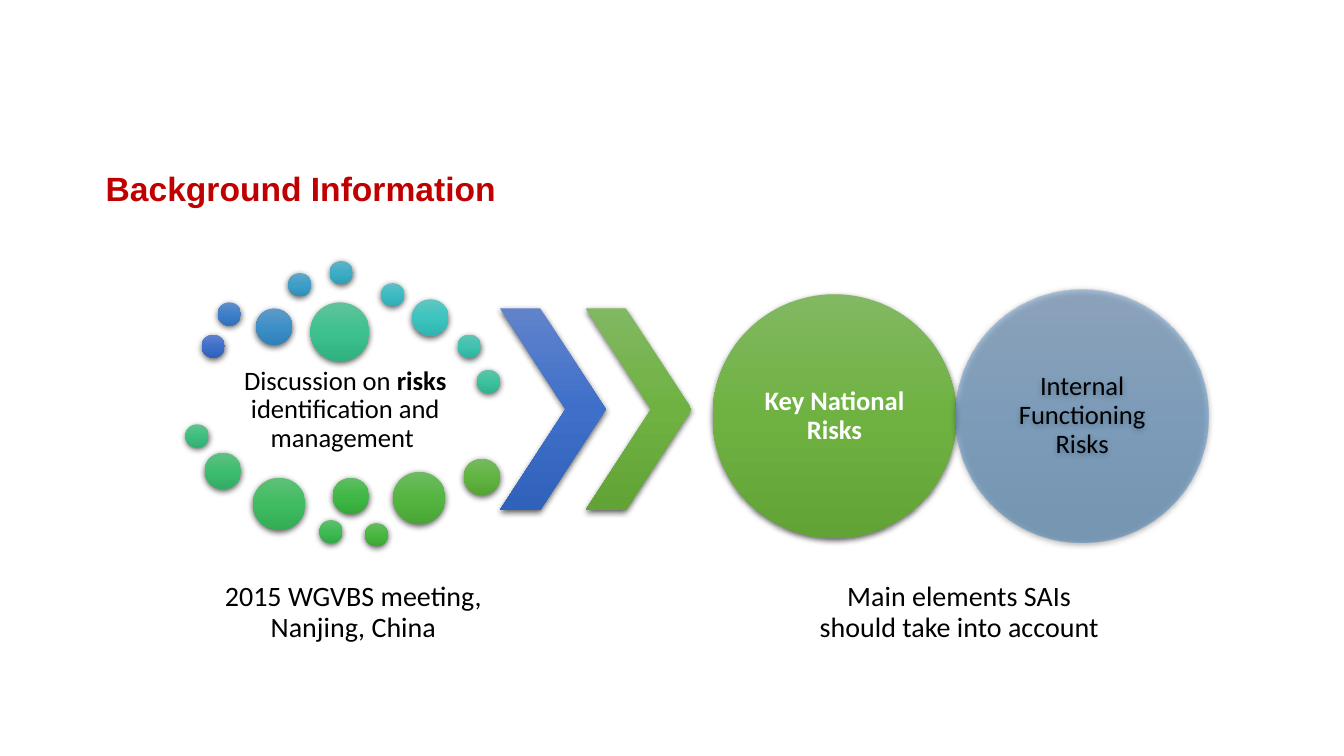
from copy import deepcopy

from lxml import etree
from pptx import Presentation
from pptx.dml.color import RGBColor
from pptx.enum.shapes import MSO_SHAPE
from pptx.enum.text import MSO_ANCHOR, PP_ALIGN
from pptx.oxml.ns import qn
from pptx.util import Pt

ELLIPSE, CHEVRON = MSO_SHAPE.OVAL, MSO_SHAPE.CHEVRON
MIDDLE = MSO_ANCHOR.MIDDLE
LEFT, CENTER = PP_ALIGN.LEFT, PP_ALIGN.CENTER

BLACK, WHITE, RED = "000000", "FFFFFF", "C00000"
# Gradients from top to bottom
BLUE = "6183CB 3E70CA 3062BB"
GREEN = "81B861 6FB242 62A336"
PALE_BLUE = "6B99C9 4D8DC7 3E7EB7"

SMALL, MEDIUM, LARGE, LARGEST = 16.6, 26, 37.4, 42
# Left, top, diameter, gradient
DOTS = [
    (144, 239, SMALL, BLUE),
    (155.5, 216, SMALL, "618ECA 3D80C9 3071BA"),
    (182.9, 220.3, MEDIUM, "619AC9 3D8FC8 3080B9"),
    (205.9, 195.1, SMALL, "61A6C8 3D9EC7 308FB8"),
    (235.4, 186.5, SMALL, "61B2C7 3DADC6 309EB7"),
    (272.2, 202.3, SMALL, "61BEC7 3DBBC5 30ACB6"),
    (294.5, 213.8, MEDIUM, "60C6C1 3DC4BF 30B5B0"),
    (326.9, 239, SMALL, "60C5B4 3DC3AF 30B39F"),
    (340.6, 264.2, SMALL, "60C4A6 3DC29F 31B28F"),
    (221.8, 216, LARGEST, "60C39A 3DC18F 31B080"),
    (132.5, 303.1, SMALL, "60C28E 3EBF7F 32AF71"),
    (146.2, 323.3, MEDIUM, "60C182 3EBD70 32AD63"),
    (180.7, 341.3, LARGE, "60C077 3FBC62 33AC55"),
    (228.2, 371.5, SMALL, "60BF6D 3FBA54 33AA47"),
    (237.6, 341.3, MEDIUM, "60BD64 40B846 34A93A"),
    (260.6, 373.7, SMALL, "65BC61 48B740 3CA735"),
    (280.8, 337, LARGE, "6EBB61 55B541 49A635"),
    (331.2, 327.6, MEDIUM, "77B961 62B441 55A436"),
]


def rgb(color):
    return RGBColor.from_string(color)


def set_alpha(color_element, percent):
    alpha = etree.SubElement(color_element, qn("a:alpha"))
    alpha.set("val", str(percent * 1000))


def fill_gradient(shape, gradient, opacity):
    """Fill with three evenly spaced stops, running from top to bottom."""
    fill = shape.fill
    fill.gradient()
    fill.gradient_angle = 270
    stop_list = shape.element.spPr.find(".//" + qn("a:gsLst"))
    stop_list.insert(1, deepcopy(stop_list[0]))
    stops = zip(fill.gradient_stops, (0, 0.5, 1), gradient.split())
    for stop, position, color in stops:
        stop.position = position
        stop.color.rgb = rgb(color)
    if opacity < 100:
        for color_element in stop_list.iter(qn("a:srgbClr")):
            set_alpha(color_element, opacity)


def add_shadow(shape):
    shape.shadow.inherit = False
    effects = shape.element.spPr.find(qn("a:effectLst"))
    shadow = etree.SubElement(effects, qn("a:outerShdw"))
    shadow.set("blurRad", str(Pt(4.5)))
    shadow.set("dist", str(Pt(1.5)))
    shadow.set("dir", str(90 * 60000))
    shadow.set("algn", "ctr")
    shadow.set("rotWithShape", "0")
    color_element = etree.SubElement(shadow, qn("a:srgbClr"))
    color_element.set("val", BLACK)
    set_alpha(color_element, 63)


def add_glossy_shape(page, kind, left, top, width, height, gradient, opacity=100):
    shape = page.shapes.add_shape(kind, Pt(left), Pt(top), Pt(width), Pt(height))
    fill_gradient(shape, gradient, opacity)
    shape.line.fill.background()
    add_shadow(shape)
    return shape


def write_text(shape, spans, size, color=BLACK, font="Calibri", align=CENTER,
               inset=2, side_inset=2):
    """Write one paragraph from (text, bold) spans."""
    frame = shape.text_frame
    frame.word_wrap = True
    frame.vertical_anchor = MIDDLE
    frame.margin_top = frame.margin_bottom = Pt(inset)
    frame.margin_left = frame.margin_right = Pt(side_inset)
    para = frame.paragraphs[0]
    para.alignment = align
    para.line_spacing = 0.9
    para.font.name = font
    para.font.size = Pt(size)
    para.font.color.rgb = rgb(color)
    for text, bold in spans:
        span = para.add_run()
        span.text = text
        span.font.bold = bold


def add_text(page, left, top, width, height, spans, size, **style):
    box = page.shapes.add_textbox(Pt(left), Pt(top), Pt(width), Pt(height))
    write_text(box, spans, size, **style)


def add_circle(page, left, top, diameter, gradient, label, color, bold, opacity=100):
    circle = add_glossy_shape(page, ELLIPSE, left, top, diameter, diameter,
                              gradient, opacity)
    write_text(circle, [(label, bold)], 19, color, inset=0, side_inset=0)


def main():
    deck = Presentation()
    deck.slide_width, deck.slide_height = Pt(960), Pt(540)
    page = deck.slides.add_slide(deck.slide_layouts[6])

    add_text(page, 68.4, 97.9, 830.9, 76.3, [("Background Information", True)], 24,
             color=RED, font="Arial", align=LEFT, inset=3.6, side_inset=7.2)

    discussion = [("Discussion on ", False), ("risks", True),
                  (" identification and management ", False)]
    add_text(page, 144, 259.2, 205.2, 67.7, discussion, 19)

    for left, top, diameter, gradient in DOTS:
        add_glossy_shape(page, ELLIPSE, left, top, diameter, diameter, gradient)

    for left, gradient in ((357.1, BLUE), (418.3, GREEN)):
        chevron = add_glossy_shape(page, CHEVRON, left, 220.3, 75.6, 144, gradient)
        chevron.adjustments[0] = 0.62

    captions = ((149.8, "2015 WGVBS meeting, Nanjing, China"),
                (582.5, "Main elements SAIs should take into account"))
    for left, caption in captions:
        add_text(page, left, 374.4, 205.2, 126.7, [(caption, False)], 20)

    add_circle(page, 509, 210.2, 174.2, GREEN, "Key National Risks", WHITE, True)
    add_circle(page, 682.6, 206.6, 180.7, PALE_BLUE, "Internal Functioning Risks",
               BLACK, False, opacity=50)

    deck.save("out.pptx")


if __name__ == "__main__":
    main()
